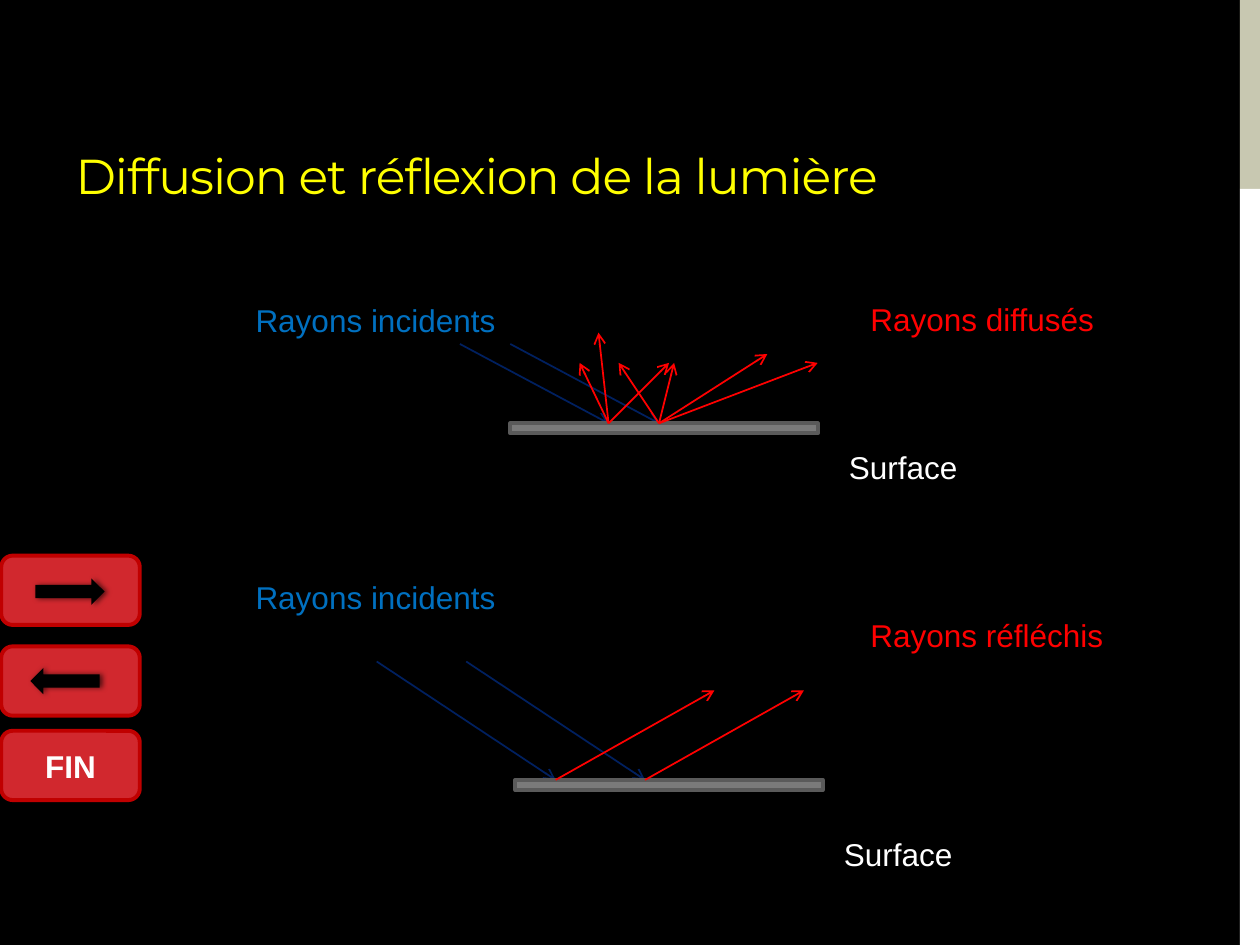
from lxml.etree import SubElement
from pptx import Presentation
from pptx.dml.color import RGBColor
from pptx.enum.shapes import MSO_CONNECTOR, MSO_SHAPE
from pptx.enum.text import MSO_ANCHOR as Anchor, MSO_AUTO_SIZE as AutoSize, PP_ALIGN as Align
from pptx.oxml.ns import qn
from pptx.util import Pt

PX = 9144
COLORS = {
    "background": "000000", "band": "C8C8B1", "white": "FFFFFF", "title": "FFFF00",
    "button": "D1282E", "button_line": "C00000", "arrow": "000000",
    "incident": "0070C0", "incident_ray": "002060", "outgoing": "FF0000",
    "surface": "7A7A7A", "surface_line": "5A5A5A",
}


def rgb(name):
    """Return the named colour."""
    return RGBColor.from_string(COLORS[name])


def emu(*lengths):
    """Turn px into EMU."""
    return [length * PX for length in lengths]


def format_runs(paragraph, size, color, font="Arial", bold=False):
    """Format every run of a paragraph."""
    for run in paragraph.runs:
        run.font.name = font
        run.font.size = Pt(size)
        run.font.bold = bold
        run.font.color.rgb = rgb(color)


def add_block(shapes, kind, box, fill, line=None):
    """Add a flat preset shape."""
    shape = shapes.add_shape(kind, *emu(*box))
    shape.shadow.inherit = False
    shape.fill.solid()
    shape.fill.fore_color.rgb = rgb(fill)
    if line:
        shape.line.color.rgb = rgb(line)
        shape.line.width = Pt(2.25)
    else:
        shape.line.fill.background()
    return shape


def add_soft_shadow(shape):
    """Give a shape a soft shadow to its right."""
    effects = shape._element.spPr.find(qn("a:effectLst"))
    shadow = SubElement(effects, qn("a:outerShdw"), blurRad=str(Pt(3)),
                        dist=str(Pt(1.5)), dir="0", algn="ctr", rotWithShape="0")
    color = SubElement(shadow, qn("a:srgbClr"), val=COLORS["arrow"])
    SubElement(color, qn("a:alpha"), val="60000")


def add_label(shapes, text, left, top, width, color):
    """Add a one-line label."""
    label = shapes.add_textbox(*emu(left, top, width, 40))
    frame = label.text_frame
    frame.word_wrap = True
    frame.auto_size = AutoSize.SHAPE_TO_FIT_TEXT
    frame.text = text
    format_runs(frame.paragraphs[0], 18, color)


def add_ray(shapes, start, end, color):
    """Add a light ray with an open arrowhead at its end."""
    ray = shapes.add_connector(MSO_CONNECTOR.STRAIGHT, *emu(*start, *end))
    ray.line.color.rgb = rgb(color)
    ray.line.width = Pt(1)
    SubElement(ray.line._get_or_add_ln(), qn("a:tailEnd"), type="arrow")
    SubElement(ray._element.spPr, qn("a:effectLst"))


def add_title(slide, left, top, width, height):
    """Place and format the title."""
    title = slide.shapes.title
    title.left, title.top, title.width, title.height = emu(left, top, width, height)
    frame = title.text_frame
    frame.text = "Diffusion et réflexion de la lumière"
    frame.word_wrap = True
    frame.auto_size = AutoSize.NONE
    frame.vertical_anchor = Anchor.BOTTOM
    paragraph = frame.paragraphs[0]
    paragraph.alignment = Align.LEFT
    format_runs(paragraph, 28, "title", "Montserrat")
    paragraph.runs[0].font._element.set("spc", "-60")


def add_side_band(slide, left, top, width, height):
    """Draw the two-colour band, one fifth of it tinted."""
    split = height // 5
    add_block(slide.shapes, MSO_SHAPE.RECTANGLE, (left, top, width, split), "band")
    add_block(slide.shapes, MSO_SHAPE.RECTANGLE,
              (left, top + split, width, height - split), "white")


def add_navigation(slide, left, top, width, height):
    """Draw the three navigation buttons."""
    buttons = [
        add_block(slide.shapes, MSO_SHAPE.ROUNDED_RECTANGLE,
                  (left, top + offset, width, height), "button", "button_line")
        for offset in (0, 72, 139)
    ]
    frame = buttons[-1].text_frame
    frame.text = "FIN"
    frame.vertical_anchor = Anchor.MIDDLE
    frame.paragraphs[0].alignment = Align.CENTER
    format_runs(frame.paragraphs[0], 18, "white", bold=True)
    for kind, x, y in ((MSO_SHAPE.RIGHT_ARROW, 27, 18), (MSO_SHAPE.LEFT_ARROW, 23, 89)):
        arrow = add_block(slide.shapes, kind, (left + x, top + y, 55, 21), "arrow")
        add_soft_shadow(arrow)


def add_diagram(slide, left, top, surface, incident, outgoing, labels):
    """Draw a lit surface; incident and outgoing map each hit point to ray offsets."""
    shapes = slide.shapes.add_group_shape().shapes
    surface_left, surface_top = left + surface[0], top + surface[1]
    hits = {x: (left + x, surface_top) for x in outgoing}
    for hit_x, hit_y in hits.values():
        add_ray(shapes, (hit_x + incident[0], hit_y + incident[1]),
                (hit_x, hit_y), "incident_ray")
    add_block(shapes, MSO_SHAPE.RECTANGLE, (surface_left, surface_top, 244, 8),
              "surface", "surface_line")
    for x, offsets in outgoing.items():
        hit_x, hit_y = hits[x]
        for dx, dy in offsets:
            add_ray(shapes, (hit_x, hit_y), (hit_x + dx, hit_y + dy), "outgoing")
    for text, x, y, width, color in labels:
        add_label(shapes, text, left + x, top + y, width, color)


def main():
    """Build the slide."""
    presentation = Presentation()
    presentation.slide_width, presentation.slide_height = emu(1000, 750)
    slide = presentation.slides.add_slide(presentation.slide_layouts[5])
    slide.background.fill.solid()
    slide.background.fill.fore_color.rgb = rgb("background")
    add_side_band(slide, 984, 0, 16, 750)
    add_navigation(slide, 1, 441, 110, 55)
    add_title(slide, 50, 17, 789, 150)
    add_diagram(
        slide, 193, 233, surface=(212, 103), incident=(-118, -63),
        outgoing={
            290: [(-23, -48), (-8, -72), (48, -48)],
            330: [(-32, -48), (12, -48), (86, -55), (126, -48)],
        },
        labels=[
            ("Rayons incidents", 0, 1, 256, "incident"),
            ("Rayons diffusés", 488, 0, 248, "outgoing"),
            (" Surface", 464, 118, 173, "white"),
        ])
    add_diagram(
        slide, 193, 454, surface=(216, 165), incident=(-142, -94),
        outgoing={x: [(126, -71)] for x in (248, 319)},
        labels=[
            ("Rayons incidents", 0, 0, 256, "incident"),
            ("Rayons réfléchis", 488, 30, 248, "outgoing"),
            (" Surface", 460, 204, 173, "white"),
        ])
    presentation.save("out.pptx")


if __name__ == "__main__":
    main()
